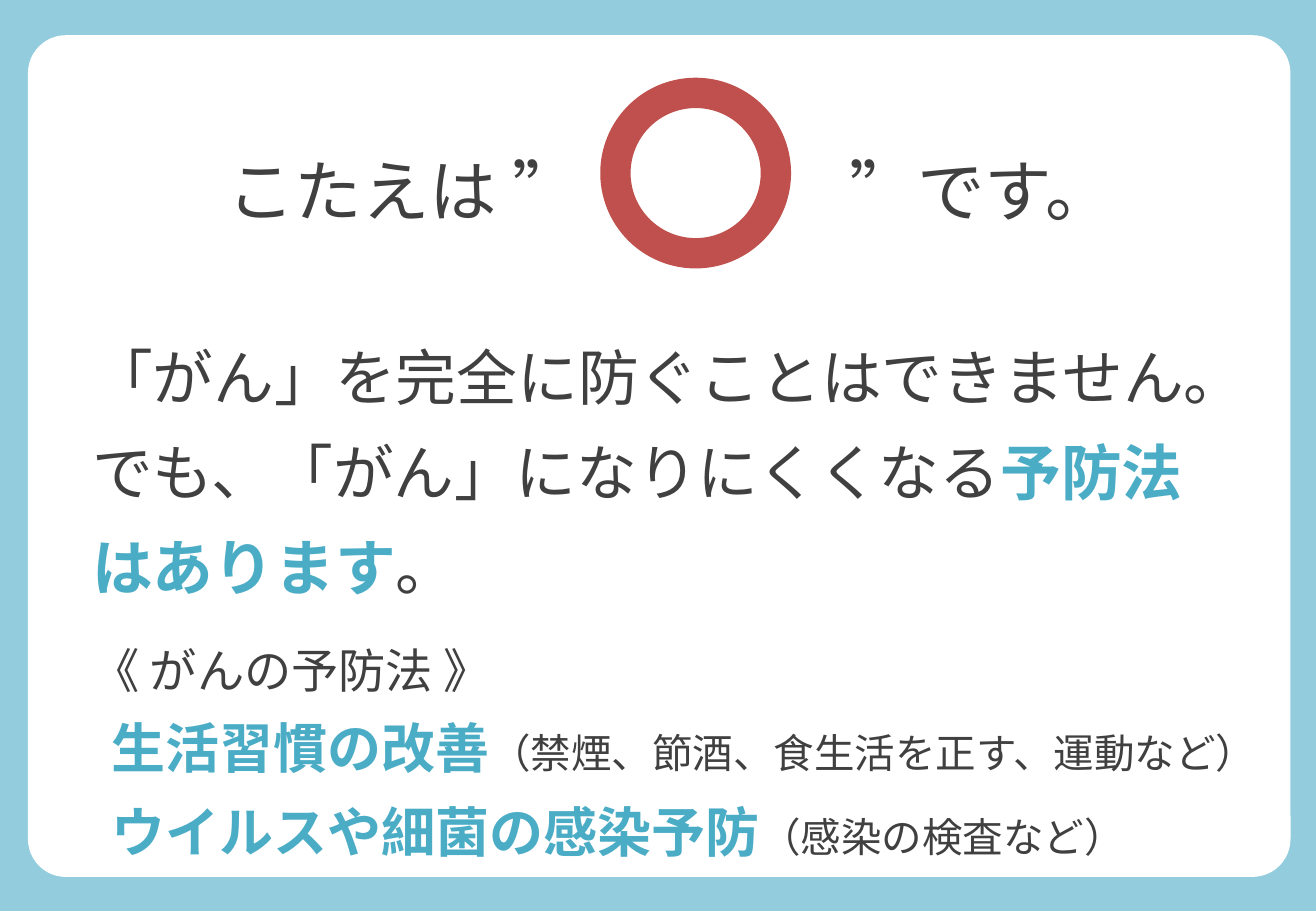
import pptx
import pptx.dml.color
import pptx.enum.shapes
import pptx.enum.text
import pptx.oxml.ns
import pptx.util
from dataclasses import dataclass
from lxml import etree

Inches = pptx.util.Inches
Pt = pptx.util.Pt
Shape = pptx.enum.shapes.MSO_SHAPE
Align = pptx.enum.text.PP_ALIGN


@dataclass(frozen=True)
class Theme:
    font: str = "Noto Sans CJK JP"
    sky: str = "93CDDD"
    white: str = "FFFFFF"
    red: str = "C0504D"
    ink: str = "404040"
    teal: str = "4BACC6"
    answer: int = 40
    body: int = 36
    method: int = 32
    heading: int = 28
    detail: int = 24


def rgb(value):
    return pptx.dml.color.RGBColor.from_string(value)


class AnswerPage:
    def __init__(self, deck, theme):
        self.theme = theme
        self.page = deck.slides.add_slide(deck.slide_layouts[5])
        self.page.background.fill.solid()
        self.page.background.fill.fore_color.rgb = rgb(theme.sky)

    def shape(self, kind, area, color, adjustment):
        shape = self.page.shapes.add_shape(kind, *map(Inches, area))
        shape.shadow.inherit = False
        shape.adjustments[0] = adjustment
        shape.fill.solid()
        shape.fill.fore_color.rgb = rgb(color)
        shape.line.fill.background()

    def style(self, font, size, color, bold=False):
        font.size = Pt(size)
        font.bold = bold
        font.color.rgb = rgb(color)

    def typeface(self, font):
        """Set the font for both Latin and Japanese characters."""
        font.name = self.theme.font
        latin = font._element.find(pptx.oxml.ns.qn("a:latin"))
        east_asian = etree.Element(pptx.oxml.ns.qn("a:ea"), typeface=self.theme.font)
        latin.addnext(east_asian)

    def paragraph(self, para, spans, spacing=1.3, indent=0):
        """Fill a paragraph with (text, size, colour, bold) spans."""
        para.alignment = Align.LEFT
        para.line_spacing = spacing
        para._p.get_or_add_pPr().set("marL", str(Inches(indent)))
        para._p.get_or_add_pPr().set("indent", "0")
        self.typeface(para.font)
        looks = {tuple(look) for _, *look in spans}
        if len(looks) == 1:
            self.style(para.font, *looks.pop())
            looks.clear()
        for text, *look in spans:
            span = para.add_run()
            span.text = text
            if looks:
                self.style(span.font, *look)

    def frame(self, box):
        frame = box.text_frame
        frame.word_wrap = True
        frame.auto_size = pptx.enum.text.MSO_AUTO_SIZE.NONE
        frame.vertical_anchor = pptx.enum.text.MSO_ANCHOR.TOP
        return frame

    def text(self, area, paragraphs, spacings=(1.3,), indent=0):
        """Add a text box; the last spacing serves all further paragraphs."""
        frame = self.frame(self.page.shapes.add_textbox(*map(Inches, area)))
        for index, spans in enumerate(paragraphs):
            para = frame.add_paragraph() if index else frame.paragraphs[0]
            spacing = spacings[min(index, len(spacings) - 1)]
            self.paragraph(para, spans, spacing, indent)

    def title(self, area, before, after, gap):
        """Set the title in two parts, with gap points added to the space between."""
        box = self.page.shapes.title
        box.left, box.top, box.width, box.height = map(Inches, area)
        para = self.frame(box).paragraphs[0]
        look = (self.theme.answer, self.theme.ink)
        self.paragraph(para, [(part, *look) for part in (before, "　", after)])
        para.alignment = Align.CENTER
        para.runs[1].font._element.set("spc", str(gap * 100))
        self.page.shapes._spTree.append(box._element)


def main():
    deck = pptx.Presentation()
    deck.slide_width, deck.slide_height = Inches(10.83), Inches(7.5)
    theme = Theme()
    page = AnswerPage(deck, theme)
    page.shape(Shape.ROUNDED_RECTANGLE, (0.23, 0.29, 10.39, 6.93), theme.white, 0.045)
    page.text((0.66, 2.57, 9.8, 2.36), [
        [("「がん」を完全に防ぐことはできません。", theme.body, theme.ink)],
        [("でも、「がん」になりにくくなる", theme.body, theme.ink),
         ("予防法", theme.body, theme.teal, True)],
        [("はあります", theme.body, theme.teal, True), ("。", theme.body, theme.ink)],
    ])
    methods = [
        ("生活習慣の改善", "（禁煙、節酒、食生活を正す、運動など）"),
        ("ウイルスや細菌の感染予防", "（感染の検査など）"),
    ]
    page.text((0.38, 5.78, 10.23, 1.49), [
        [(method, theme.method, theme.teal, True), (detail, theme.detail, theme.ink)]
        for method, detail in methods
    ], spacings=(1.1, 1.3), indent=0.44)
    page.shape(Shape.DONUT, (4.94, 0.64, 1.57, 1.57), theme.red, 0.159)
    page.title((1.34, 0.98, 8.35, 0.8), "こたえは ”", "”です。", gap=3 * theme.answer)
    page.text((0.66, 5.09, 3.89, 0.63), [
        [("《 がんの予防法 》", theme.heading, theme.ink)],
    ])
    deck.save("out.pptx")


if __name__ == "__main__":
    main()
